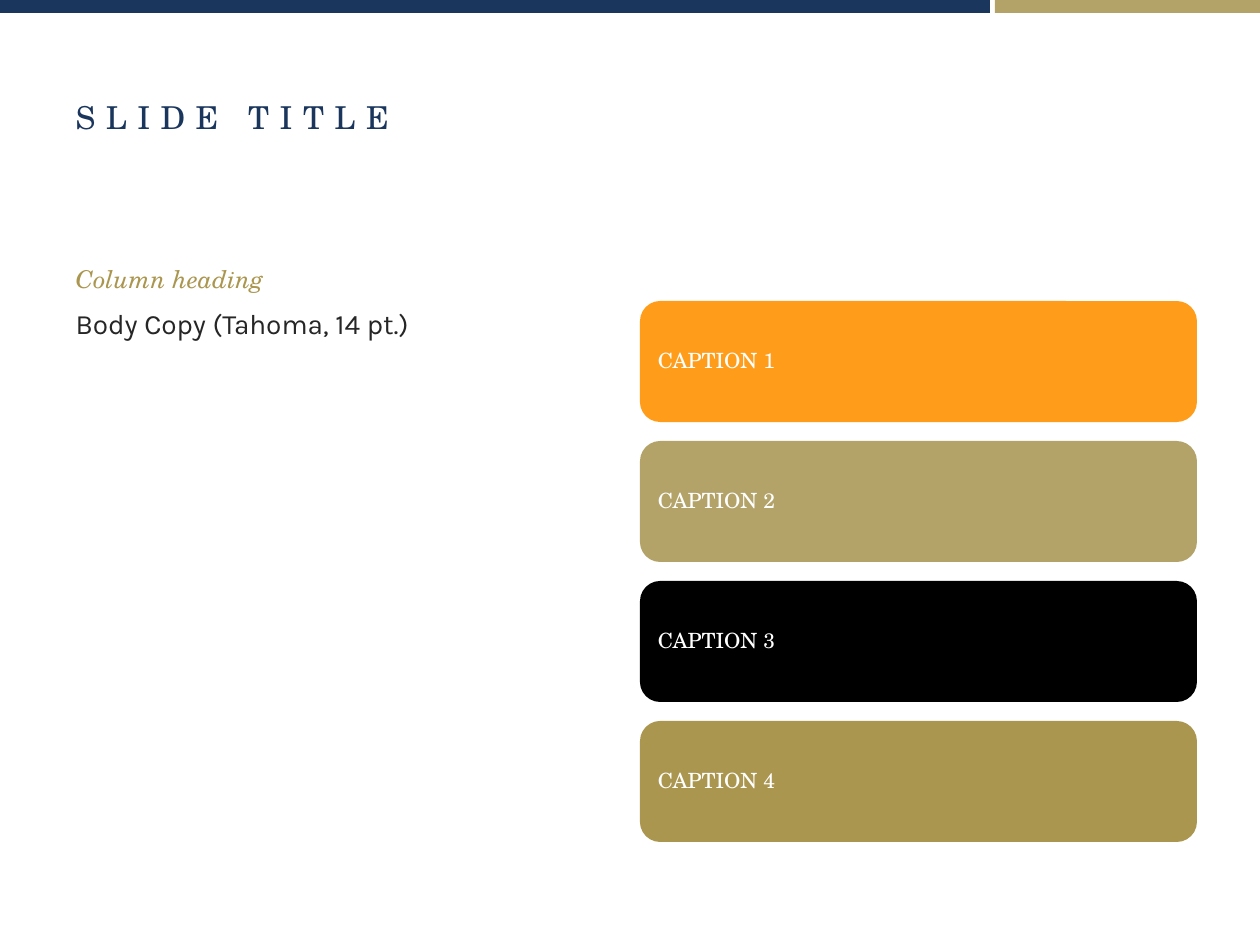
from pptx import Presentation
from pptx import util as u
from pptx.dml.color import RGBColor
from pptx.enum import shapes, text
from pptx.oxml.ns import qn

SCALE = 914400 / 126
SERIF, SANS = "TeX Gyre Schola", "Karla"
NAVY, GOLD, SAND, INK = "1A365D", "AB964F", "B3A369", "262626"
ORANGE, BLACK, WHITE = "FF9D1A", "000000", "FFFFFF"


def px(n):
    return u.Emu(round(n * SCALE))


def rgb(code):
    return RGBColor.from_string(code)


class Deck:
    """Holds the slide size, the fonts and the current slide."""

    def __init__(self):
        self.prs = Presentation()
        self.prs.slide_width, self.prs.slide_height = px(1260), px(945)
        self.slide = self.prs.slides.add_slide(self.prs.slide_layouts[4])

    def label(self, shape, words, size, color, font=SERIF, anchor="MIDDLE",
              italic=False, track=0):
        """Put one left-aligned run in a shape; track is letter spacing in points."""
        frame = shape.text_frame
        frame.word_wrap = True
        frame.auto_size = text.MSO_AUTO_SIZE.NONE
        frame.vertical_anchor = text.MSO_ANCHOR[anchor]
        para = frame.paragraphs[0]
        para.alignment = text.PP_ALIGN.LEFT
        para.space_before = u.Pt(0)
        run = para.add_run()
        run.text = words
        run.font.name, run.font.size = font, u.Pt(size)
        run.font.bold, run.font.italic = False, italic
        run.font.color.rgb = rgb(color)
        if track:
            run._r.get_or_add_rPr().set("spc", str(track * 100))
        return para

    def holder(self, idx, box, words, size, color, **look):
        """Move and fill a template placeholder, without a bullet."""
        shape = self.slide.placeholders[idx]
        shape.left, shape.top, shape.width, shape.height = map(px, box)
        para = self.label(shape, words, size, color, **look)
        props = para._p.get_or_add_pPr()
        props.set("marL", "0")
        props.set("indent", "0")
        props.append(props.makeelement(qn("a:buNone"), {}))

    def block(self, kind, box, fill):
        shape = self.slide.shapes.add_shape(kind, *map(px, box))
        shape.shadow.inherit = False
        shape.fill.solid()
        shape.fill.fore_color.rgb = rgb(fill)
        shape.line.fill.background()
        return shape

    def bar(self, left, width, fill):
        self.block(shapes.MSO_SHAPE.RECTANGLE, (left, 0, width, 13), fill)

    def card(self, box, words, fill):
        shape = self.block(shapes.MSO_SHAPE.ROUNDED_RECTANGLE, box, fill)
        shape.text_frame.margin_left = shape.text_frame.margin_right = px(12)
        self.label(shape, words, 12, WHITE).line_spacing = 0.9

    def prune(self):
        """Remove placeholders that hold no text."""
        for shape in list(self.slide.placeholders):
            if not shape.text_frame.text:
                shape._element.getparent().remove(shape._element)


def main():
    deck = Deck()
    deck.bar(0, 990, "1B365D")
    deck.bar(995, 265, SAND)
    deck.holder(0, (63, 38, 1134, 158), "SLIDE TITLE", 18, NAVY, track=6)
    deck.holder(1, (63, 212, 557, 88), "Column heading", 14, GOLD,
                anchor="BOTTOM", italic=True)
    deck.holder(2, (63, 300, 557, 544), "Body Copy (Tahoma, 14 pt.)", 16, INK,
                font=SANS, anchor="TOP")
    for i, fill in enumerate((ORANGE, SAND, BLACK, GOLD)):
        deck.card((640, 301 + 140 * i, 557, 121), f"CAPTION {i + 1}", fill)
    deck.prune()
    deck.prs.save("out.pptx")


if __name__ == "__main__":
    main()
